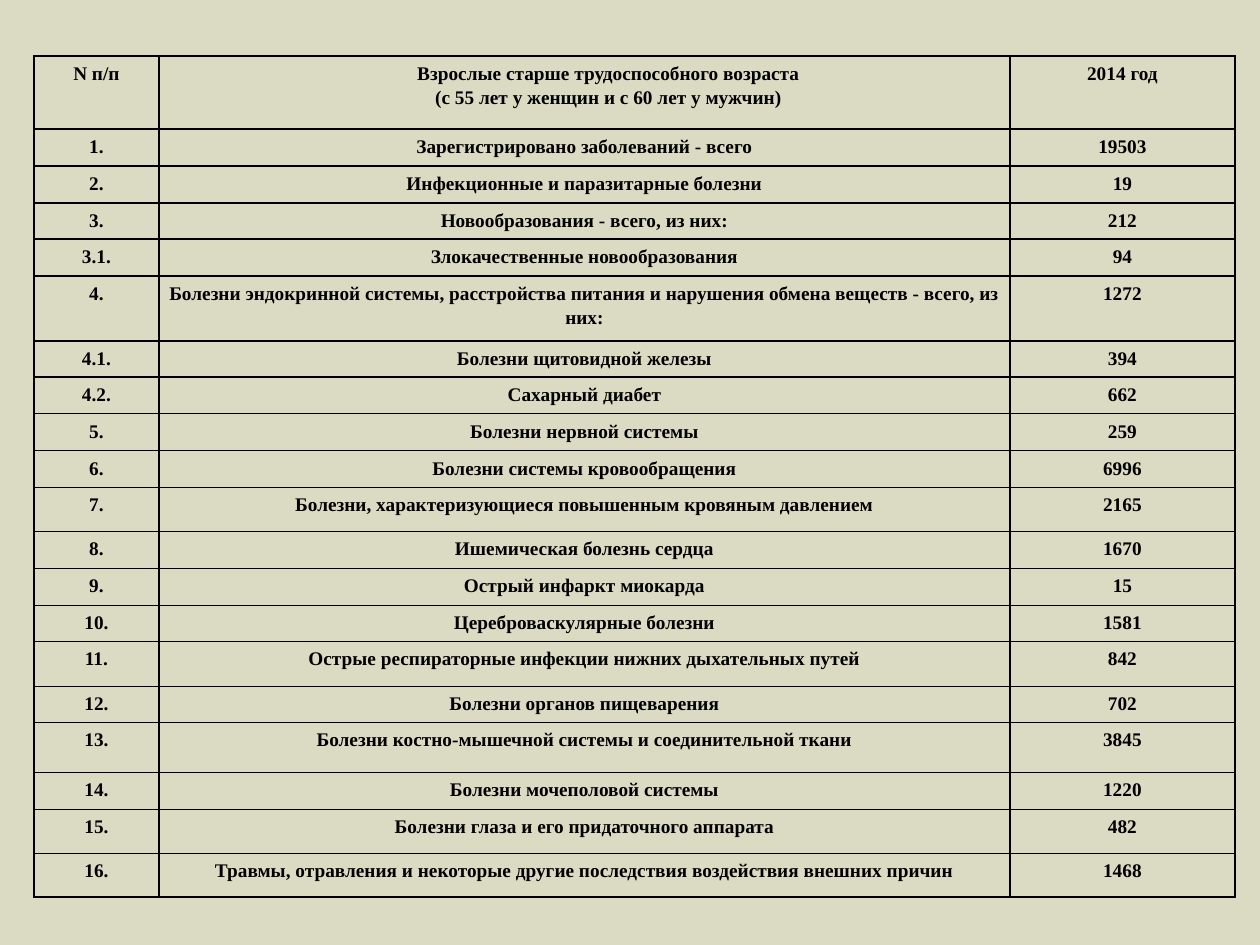
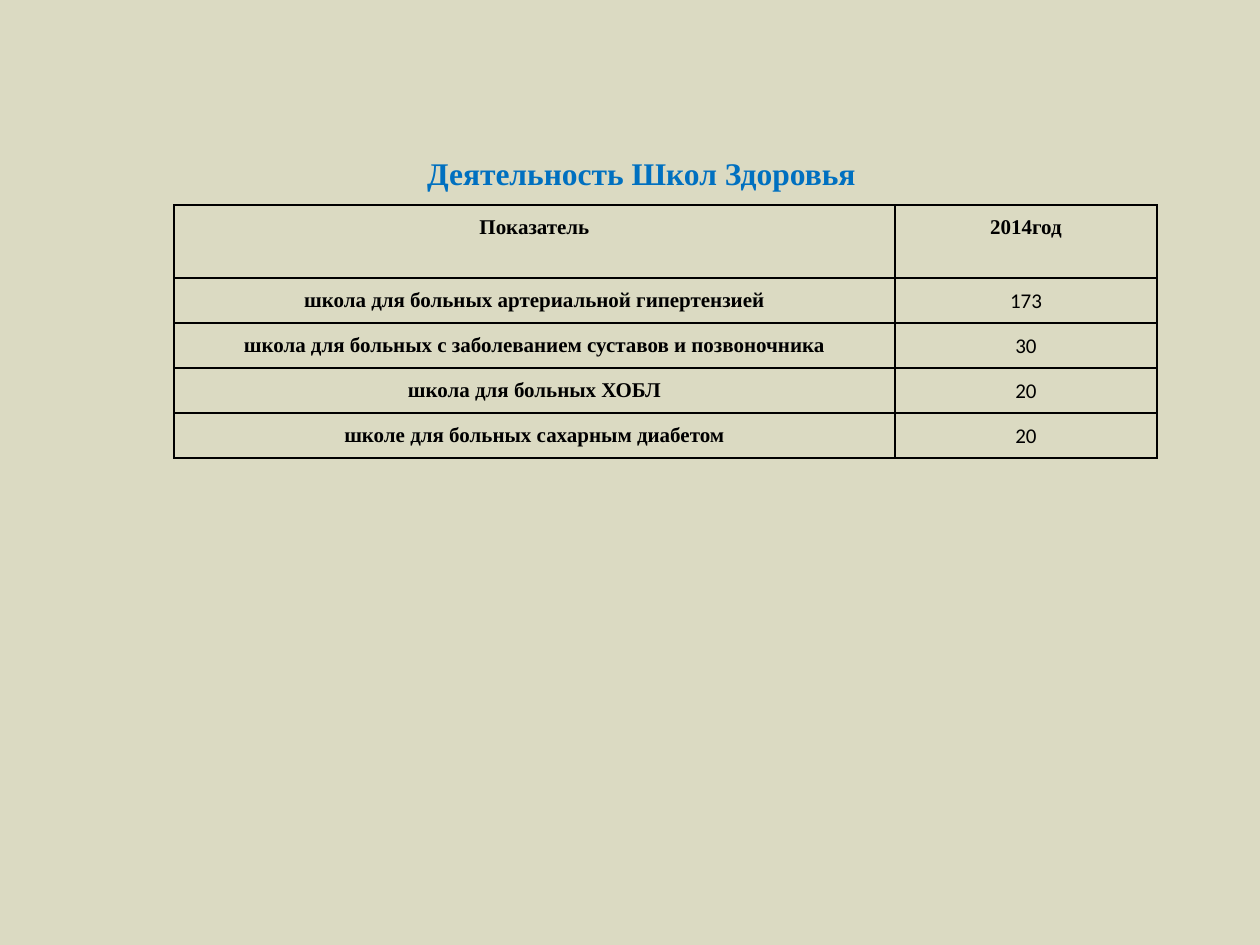
from lxml import etree
from pptx import Presentation
from pptx import util as u
from pptx.dml.color import RGBColor
from pptx.enum import text as t
from pptx.oxml.ns import qn

# Content
CASES = [
    ("N п/п", "Взрослые старше трудоспособного возраста\n"
              "(с 55 лет у женщин и с 60 лет у мужчин)", "2014 год"),
    ("1.", "Зарегистрировано заболеваний - всего", "19503"),
    ("2.", "Инфекционные и паразитарные болезни", "19"),
    ("3.", "Новообразования - всего, из них:", "212"),
    ("3.1.", "Злокачественные новообразования", "94"),
    ("4.", "Болезни эндокринной системы, расстройства питания и "
           "нарушения обмена веществ - всего, из них:", "1272"),
    ("4.1.", "Болезни щитовидной железы", "394"),
    ("4.2.", "Сахарный диабет", "662"),
    ("5.", "Болезни нервной системы", "259"),
    ("6.", "Болезни системы кровообращения", "6996"),
    ("7.", "Болезни, характеризующиеся повышенным кровяным давлением", "2165"),
    ("8.", "Ишемическая болезнь сердца", "1670"),
    ("9.", "Острый инфаркт миокарда", "15"),
    ("10.", "Цереброваскулярные болезни", "1581"),
    ("11.", "Острые респираторные инфекции нижних дыхательных путей", "842"),
    ("12.", "Болезни органов пищеварения", "702"),
    ("13.", "Болезни костно-мышечной системы и соединительной ткани", "3845"),
    ("14.", "Болезни мочеполовой системы", "1220"),
    ("15.", "Болезни глаза и его придаточного аппарата", "482"),
    ("16.", "Травмы, отравления и некоторые другие последствия "
            "воздействия внешних причин", "1468"),
]
TITLE = "Деятельность Школ Здоровья"
SCHOOLS = [
    ("Показатель", "2014год"),
    ("школа для больных артериальной гипертензией", "173"),
    ("школа для больных с заболеванием суставов и позвоночника", "30"),
    ("школа для больных ХОБЛ", "20"),
    ("школе для больных сахарным диабетом", "20"),
]

# Sizes in px, 126 to the inch
CASE_COLS = [125, 851, 225]
CASE_ROWS = [73, 37, 37, 36, 37, 65, 36, 37, 37, 37,
             44, 37, 37, 36, 45, 36, 50, 37, 44, 44]
SCHOOL_COLS = [721, 262]
SCHOOL_ROWS = [73] + [45] * 4

# Shared look
PAPER, INK, BLUE = "DBDAC2", "000000", "0070C0"
SERIF, SANS = "Times New Roman", "Calibri"


def px(n):
    return u.Emu(round(n * 914400 / 126))


def rgb(code):
    return RGBColor.from_string(code)


def style(par, size, color=INK, face=SERIF, bold=True):
    par.alignment = t.PP_ALIGN.CENTER
    for run in par.runs:
        font = run.font
        font.name, font.size, font.bold = face, u.Pt(size), bold
        font.color.rgb = rgb(color)


def frame(cell):
    props = cell._tc.get_or_add_tcPr()
    for side in ("lnL", "lnR", "lnT", "lnB"):
        line = etree.SubElement(props, qn("a:" + side), w=str(u.Pt(1)))
        fill = etree.SubElement(line, qn("a:solidFill"))
        etree.SubElement(fill, qn("a:srgbClr"), val=INK)
    cell.fill.background()


def grid(slide, data, left, top, cols, rows, size, pad):
    table = slide.shapes.add_table(
        len(rows), len(cols), px(left), px(top),
        px(sum(cols)), px(sum(rows))).table
    table.first_row = table.horz_banding = False
    for col, width in zip(table.columns, cols):
        col.width = px(width)
    for row, height, words in zip(table.rows, rows, data):
        row.height = px(height)
        for cell, word in zip(row.cells, words):
            cell.margin_left = cell.margin_right = px(pad[0])
            cell.margin_top = cell.margin_bottom = px(pad[1])
            cell.text_frame.text = word
            for par in cell.text_frame.paragraphs:
                par.line_spacing = 1.15
                style(par, size)
            frame(cell)
    return table


# Shared background
deck = Presentation()
deck.slide_width, deck.slide_height = px(1260), px(945)
back = deck.slide_master.background.fill
back.solid()
back.fore_color.rgb = rgb(PAPER)

# Cases among older adults
slide = deck.slides.add_slide(deck.slide_layouts[6])
table = grid(slide, CASES, 34, 56, CASE_COLS, CASE_ROWS, 11, (3, 4))
for par in table.cell(0, 1).text_frame.paragraphs:
    par._p.get_or_add_pPr().set("indent", str(px(48)))

# Health schools
slide = deck.slides.add_slide(deck.slide_layouts[5])
title = slide.shapes.title
title.left, title.top, title.width, title.height = map(px, (412, 145, 459, 56))
title.text_frame.text = TITLE
title.text_frame.vertical_anchor = t.MSO_ANCHOR.MIDDLE
style(title.text_frame.paragraphs[0], 18, BLUE)
table = grid(slide, SCHOOLS, 174, 205, SCHOOL_COLS, SCHOOL_ROWS, 12, (5, 7))
for row in range(1, len(SCHOOLS)):
    style(table.cell(row, 1).text_frame.paragraphs[0], 12, face=SANS, bold=False)

deck.save("out.pptx")
